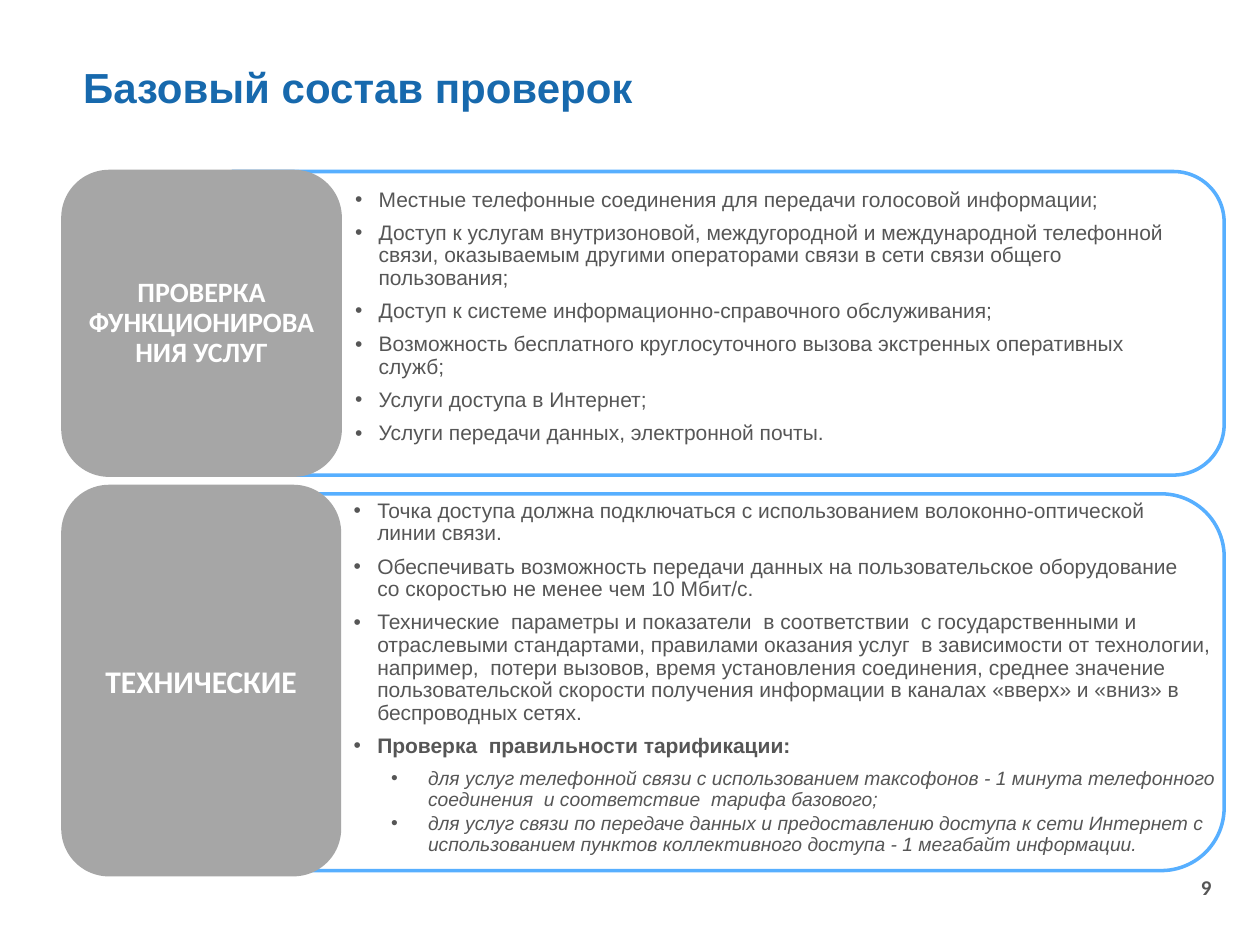
from dataclasses import dataclass

import pptx
import pptx.dml.color
import pptx.enum.shapes
import pptx.enum.text
import pptx.oxml
import pptx.oxml.ns
import pptx.util
from pptx.util import Pt

Shape = pptx.enum.shapes.MSO_SHAPE
Align = pptx.enum.text.PP_ALIGN
Anchor = pptx.enum.text.MSO_ANCHOR

HUES = {"title": "1769AD", "frame": "57AFFF", "label": "A6A6A6",
        "text": "565656", "white": "FFFFFF"}


@dataclass
class Box:
    left: float
    top: float
    width: float
    height: float

    def args(self) -> tuple:
        return Pt(self.left), Pt(self.top), Pt(self.width), Pt(self.height)


@dataclass
class Style:
    level: int
    indent: float
    hang: float
    size: float
    after: float
    bold: bool = False
    italic: bool = False


ITEM = Style(1, 13.5, 13.5, 12, 6)
HEAD = Style(1, 13.5, 13.5, 12, 6, bold=True)
SUB = Style(2, 42.5, 21, 11, 2, italic=True)


@dataclass
class Panel:
    label: str
    size: float
    inset: float
    spacing: float
    tab: Box
    frame: Box
    body: Box
    items: list


PANELS = [
    Panel("ПРОВЕРКА ФУНКЦИОНИРОВАНИЯ УСЛУГ", 16, 3.6, 0.9,
          Box(36, 98, 158.4, 173.5), Box(132.5, 98, 567, 173.5),
          Box(195.8, 104.4, 486, 175.7), [
        (ITEM, "Местные телефонные соединения для передачи голосовой информации;"),
        (ITEM, "Доступ к услугам внутризоновой, междугородной и международной "
               "телефонной связи, оказываемым другими операторами связи в сети "
               "связи общего пользования;"),
        (ITEM, "Доступ к системе информационно-справочного обслуживания;"),
        (ITEM, "Возможность бесплатного круглосуточного вызова экстренных "
               "оперативных служб;"),
        (ITEM, "Услуги доступа в Интернет;"),
        (ITEM, "Услуги передачи данных, электронной почты."),
    ]),
    Panel("ТЕХНИЧЕСКИЕ", 18, 7.2, 1.0,
          Box(36, 278, 158, 221.8), Box(165, 282.2, 534.5, 215.3),
          Box(195, 282.2, 512.6, 229), [
        (ITEM, "Точка доступа должна подключаться с использованием "
               "волоконно-оптической\nлинии связи."),
        (ITEM, "Обеспечивать возможность передачи данных на пользовательское "
               "оборудование\nсо скоростью не менее чем 10 Мбит/с."),
        (ITEM, "Технические  параметры и показатели  в соответствии  с "
               "государственными и  отраслевыми стандартами, правилами оказания "
               "услуг  в зависимости от технологии, например,  потери вызовов, "
               "время установления соединения, среднее значение пользовательской "
               "скорости получения информации в каналах «вверх» и «вниз» в "
               "беспроводных сетях."),
        (HEAD, "Проверка  правильности тарификации:"),
        (SUB, "для услуг телефонной связи с использованием таксофонов - 1 минута "
              "телефонного соединения  и соответствие  тарифа базового;"),
        (SUB, "для услуг связи по передаче данных и предоставлению доступа к сети "
              "Интернет с использованием пунктов коллективного доступа - "
              "1 мегабайт информации."),
    ]),
]


def tint(name: str) -> pptx.dml.color.RGBColor:
    return pptx.dml.color.RGBColor.from_string(HUES[name])


def format_runs(para, face: str, size: float, hue: str,
                bold: bool = False, italic: bool = False) -> None:
    for run in para.runs:
        font = run.font
        font.name, font.size = face, Pt(size)
        font.bold, font.italic = bold, italic
        font.color.rgb = tint(hue)


def draw_frame(slide, box: Box) -> None:
    """Draw an outline with its right corners rounded, by a quarter turn."""
    left = box.left + (box.width - box.height) / 2
    top = box.top + (box.height - box.width) / 2
    turned = Box(left, top, box.height, box.width)
    shape = slide.shapes.add_shape(Shape.ROUND_2_SAME_RECTANGLE, *turned.args())
    shape.rotation = 90
    shape.shadow.inherit = False
    shape.fill.background()
    shape.line.color.rgb = tint("frame")
    shape.line.width = Pt(2)


def draw_tab(slide, panel: Panel) -> None:
    shape = slide.shapes.add_shape(Shape.ROUNDED_RECTANGLE, *panel.tab.args())
    shape.shadow.inherit = False
    shape.fill.solid()
    shape.fill.fore_color.rgb = tint("label")
    shape.line.color.rgb = tint("label")
    shape.line.width = Pt(2)
    frame = shape.text_frame
    frame.word_wrap = True
    frame.margin_left = frame.margin_right = Pt(panel.inset)
    frame.vertical_anchor = Anchor.MIDDLE
    frame.text = panel.label
    para = frame.paragraphs[0]
    para.alignment = Align.CENTER
    para.line_spacing = panel.spacing
    format_runs(para, "Calibri", panel.size, "white", bold=True)


def add_bullet(para, style: Style) -> None:
    props = para._p.get_or_add_pPr()
    props.set("marL", str(Pt(style.indent)))
    props.set("indent", str(-Pt(style.hang)))
    space = pptx.oxml.ns.nsdecls("a")
    for tag in (f'<a:buFont {space} typeface="Arial"/>',
                f'<a:buChar {space} char="•"/>'):
        props.append(pptx.oxml.parse_xml(tag))


def draw_list(slide, panel: Panel) -> None:
    frame = slide.shapes.add_textbox(*panel.body.args()).text_frame
    frame.word_wrap = True
    for index, (style, text) in enumerate(panel.items):
        para = frame.add_paragraph() if index else frame.paragraphs[0]
        para.text = text
        add_bullet(para, style)
        para.level = style.level
        para.line_spacing = 0.9
        para.space_after = Pt(style.after)
        format_runs(para, "Arial", style.size, "text", style.bold, style.italic)


def draw_title(slide, text: str) -> None:
    title = slide.shapes.title
    title.left, title.top, title.width, title.height = Box(34, 31.7, 664, 52.6).args()
    frame = title.text_frame
    frame.text = text
    frame.margin_left = Pt(13.5)
    frame.vertical_anchor = Anchor.TOP
    frame.paragraphs[0].alignment = Align.LEFT
    format_runs(frame.paragraphs[0], "Arial", 24, "title", bold=True)


def draw_number(slide, text: str) -> None:
    frame = slide.shapes.add_textbox(*Box(531.4, 496, 168, 28.8).args()).text_frame
    frame.word_wrap = True
    frame.text = text
    frame.paragraphs[0].alignment = Align.RIGHT
    format_runs(frame.paragraphs[0], "Calibri", 12, "text", bold=True)


def main() -> None:
    deck = pptx.Presentation()
    deck.slide_width, deck.slide_height = Pt(720), Pt(540)
    slide = deck.slides.add_slide(deck.slide_layouts[5])
    draw_title(slide, "Базовый состав проверок")
    for panel in PANELS:
        draw_frame(slide, panel.frame)
        draw_tab(slide, panel)
        draw_list(slide, panel)
    draw_number(slide, "9")
    deck.save("out.pptx")


if __name__ == "__main__":
    main()
